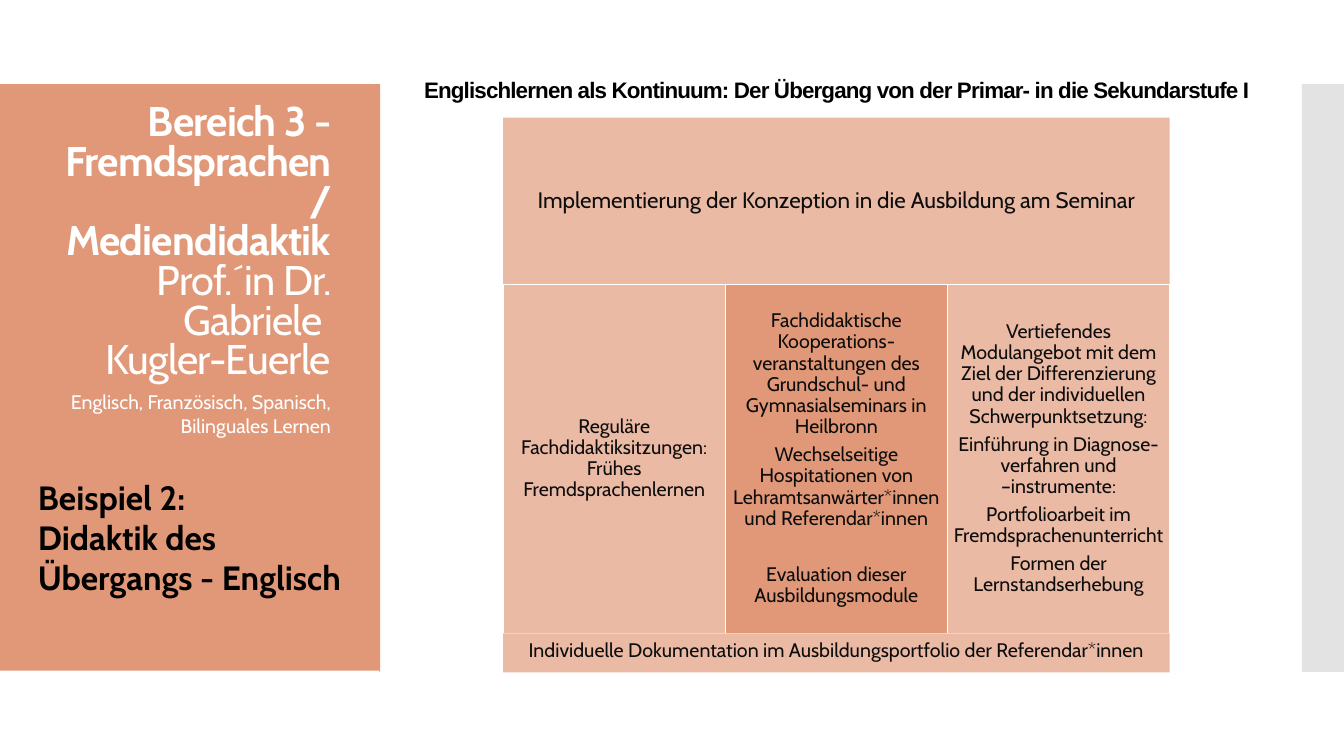
import pptx
import pptx.util
import pptx.dml.color
import pptx.enum.shapes
import pptx.enum.text

Pt = pptx.util.Pt
RGBColor = pptx.dml.color.RGBColor
ALIGN = pptx.enum.text.PP_ALIGN
ANCHOR = pptx.enum.text.MSO_ANCHOR

WHITE = RGBColor(0xFF, 0xFF, 0xFF)
BLACK = RGBColor(0x00, 0x00, 0x00)
INK = RGBColor(0x0D, 0x0D, 0x0D)
SALMON = RGBColor(0xE0, 0x98, 0x78)
PALE = RGBColor(0xEA, 0xBA, 0xA5)
GREY = RGBColor(0xE3, 0xE3, 0xE3)

prs = pptx.Presentation()
prs.slide_width = Pt(960)
prs.slide_height = Pt(540)
s = prs.slides.add_slide(prs.slide_layouts[6])


def add_rect(left, top, width, height, fill, line=None):
    sp = s.shapes.add_shape(pptx.enum.shapes.MSO_SHAPE.RECTANGLE,
                            Pt(left), Pt(top), Pt(width), Pt(height))
    sp.shadow.inherit = False
    sp.fill.solid()
    sp.fill.fore_color.rgb = fill
    if line is None:
        sp.line.fill.background()
    else:
        sp.line.color.rgb = line
        sp.line.width = Pt(0.85)
    return sp


def write(sp, texts, size, color, align, anchor=ANCHOR.TOP, font="Cabin",
          bold=False, spacing=1.0, after=0, inset=None, tracking=None):
    tf = sp.text_frame
    tf.word_wrap = True
    tf.vertical_anchor = anchor
    if inset is not None:
        tf.margin_left = tf.margin_right = Pt(inset)
        tf.margin_top = tf.margin_bottom = Pt(inset)
    for i, text in enumerate(texts):
        p = tf.paragraphs[0] if i == 0 else tf.add_paragraph()
        p.text = text
        p.alignment = align
        p.line_spacing = spacing
        p.space_after = Pt(after)
        for r in p.runs:
            r.font.name = font
            r.font.size = Pt(size)
            r.font.bold = bold
            r.font.color.rgb = color
            if tracking is not None:
                r.font._element.set("spc", str(round(tracking * 100)))
    return tf


add_rect(930, 60, 30, 420, GREY)
add_rect(0, 60, 271.5, 420, SALMON)
add_rect(0, 479, 271, 60, WHITE)

title = s.shapes.add_textbox(Pt(20), Pt(90), Pt(223.5), Pt(187))
tf = write(title,
           ["Bereich 3 - Fremdsprachen / Mediendidaktik\nProf.´in Dr. Gabriele ",
            "Kugler-Euerle"],
           29.6, WHITE, ALIGN.RIGHT, ANCHOR.BOTTOM, spacing=0.8, tracking=-0.6)
tf.paragraphs[0].runs[0].font.bold = True

subjects = s.shapes.add_textbox(Pt(20), Pt(275), Pt(223.5), Pt(183))
write(subjects, ["Englisch, Französisch, Spanisch, Bilinguales Lernen"],
      14, WHITE, ALIGN.RIGHT)

example = s.shapes.add_textbox(Pt(20), Pt(337), Pt(232), Pt(94))
write(example, ["Beispiel 2:", "Didaktik des Übergangs - Englisch"],
      24, BLACK, ALIGN.LEFT, bold=True)

heading = s.shapes.add_textbox(Pt(252), Pt(49.5), Pt(648), Pt(28))
write(heading,
      ["Englischlernen als Kontinuum: Der Übergang von der Primar- in die Sekundarstufe I"],
      16, BLACK, ALIGN.RIGHT, ANCHOR.BOTTOM, font="Arial", bold=True,
      spacing=0.9, tracking=-0.6)

GRID_LEFT, GRID_WIDTH = 359.4, 476.1
HEAD_TOP, COLUMN_TOP, FOOT_TOP, FOOT_BOTTOM = 84, 203, 452.4, 480.3

head = add_rect(GRID_LEFT, HEAD_TOP, GRID_WIDTH, COLUMN_TOP - HEAD_TOP, PALE)
write(head, ["Implementierung der Konzeption in die Ausbildung am Seminar"],
      16, INK, ALIGN.CENTER, ANCHOR.MIDDLE, spacing=0.9, after=5.6, inset=5)

columns = [
    (PALE, ["Reguläre Fachdidaktiksitzungen: Frühes Fremdsprachenlernen"]),
    (SALMON, [
        "Fachdidaktische Kooperations-veranstaltungen des Grundschul- und "
        "Gymnasialseminars in Heilbronn",
        "Wechselseitige Hospitationen von Lehramtsanwärter*innen und Referendar*innen",
        "Evaluation dieser Ausbildungsmodule",
    ]),
    (PALE, [
        "Vertiefendes Modulangebot mit dem Ziel der Differenzierung und der "
        "individuellen Schwerpunktsetzung:",
        "Einführung in Diagnose-verfahren und\n–instrumente:",
        "Portfolioarbeit im Fremdsprachenunterricht",
        "Formen der Lernstandserhebung",
    ]),
]
column_width = GRID_WIDTH / len(columns)
for i, (fill, texts) in enumerate(columns):
    sp = add_rect(GRID_LEFT + i * column_width, COLUMN_TOP, column_width,
                  FOOT_TOP - COLUMN_TOP, fill, WHITE)
    tf = write(sp, texts, 14, INK, ALIGN.CENTER, ANCHOR.MIDDLE,
               spacing=0.9, after=4.9, inset=3.6)
    if fill == SALMON:
        tf.paragraphs[-1].space_before = Pt(20)

foot = add_rect(GRID_LEFT, FOOT_TOP, GRID_WIDTH, FOOT_BOTTOM - FOOT_TOP, PALE)
write(foot, ["Individuelle Dokumentation im Ausbildungsportfolio der Referendar*innen"],
      14, INK, ALIGN.CENTER)

prs.save("out.pptx")
